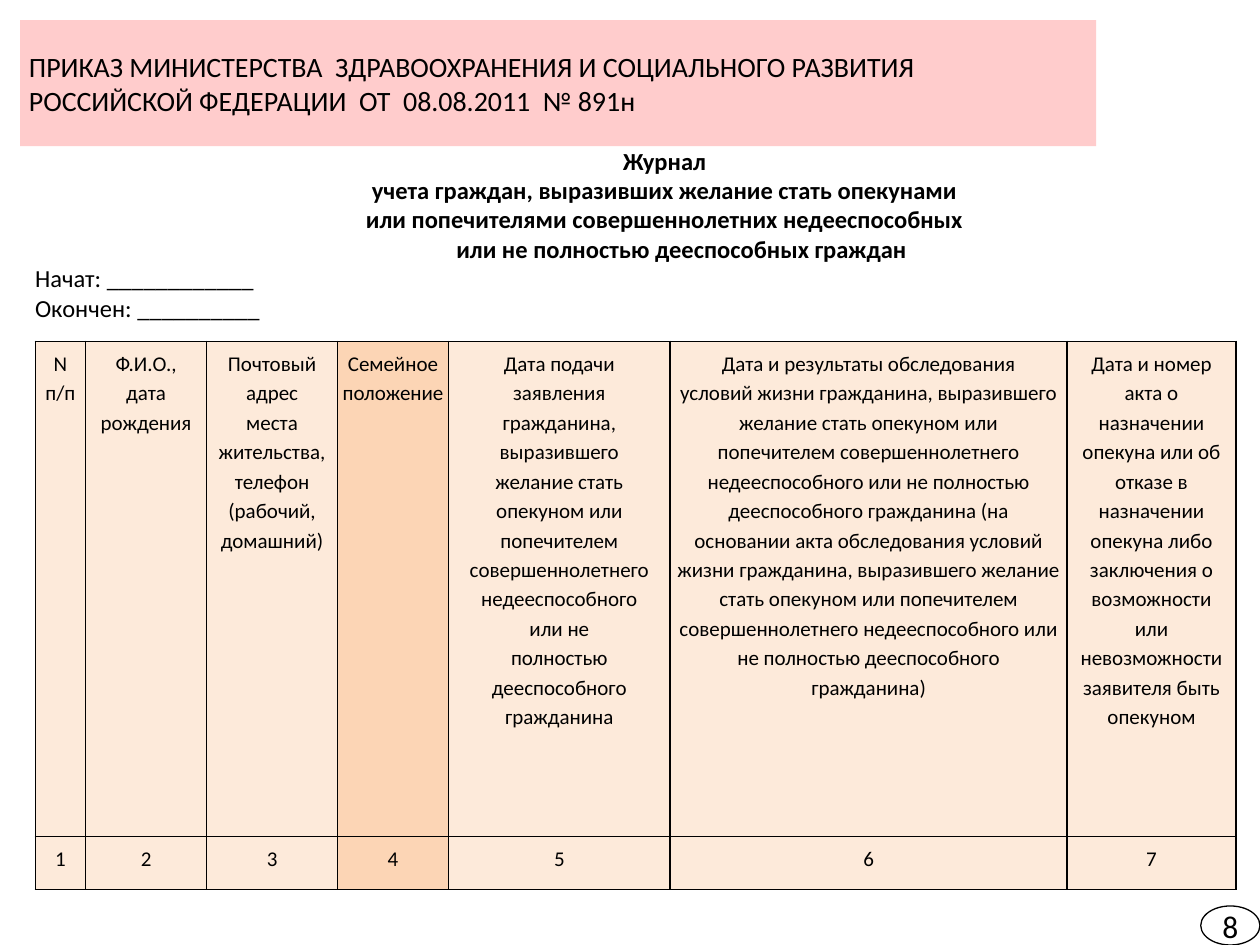
from dataclasses import dataclass

from lxml import etree
from pptx import Presentation
from pptx import util as u
from pptx.dml.color import RGBColor
from pptx.enum import shapes, text
from pptx.oxml.ns import qn

SLIDE_WIDTH, SLIDE_HEIGHT = u.Inches(10), u.Inches(7.5)
FONT, BLACK, PINK, PEACH, ORANGE = "Calibri", "000000", "FFCCCC", "FDEADA", "FCD5B5"
CENTER, LEFT = text.PP_ALIGN.CENTER, text.PP_ALIGN.LEFT


@dataclass
class Region:
    """A rectangle in percent of the slide's width and height."""
    left: float
    top: float
    width: float
    height: float

    def lengths(self) -> tuple:
        """Return left, top, width and height as slide lengths."""
        return (across(self.left), down(self.top), across(self.width), down(self.height))


@dataclass
class Line:
    """One paragraph with its look and its indent in inches."""
    words: str
    size: float
    align: text.PP_ALIGN = CENTER
    bold: bool = False
    indent: float = 0
    spacing: float = 1.0


@dataclass
class Column:
    """A journal column: width in percent of the slide, heading lines, fill."""
    width: float
    heading: str
    fill: str = PEACH


TITLE = ("ПРИКАЗ МИНИСТЕРСТВА  ЗДРАВООХРАНЕНИЯ И СОЦИАЛЬНОГО РАЗВИТИЯ",
         "РОССИЙСКОЙ ФЕДЕРАЦИИ  ОТ  08.08.2011  № 891н")
JOURNAL = [
    Line("Журнал", 14, bold=True, indent=0.55),
    Line("учета граждан, выразивших желание стать опекунами", 14, bold=True, indent=0.55),
    Line("или попечителями совершеннолетних недееспособных", 14, bold=True, indent=0.55),
    Line("или не полностью дееспособных граждан", 14, bold=True, indent=0.82),
    Line("Начат: ____________", 14, LEFT, indent=0.18),
    Line("Окончен: __________", 14, LEFT, indent=0.18),
]
COLUMNS = [
    Column(4, "N|п/п"),
    Column(9.6, "Ф.И.О.,|дата|рождения"),
    Column(10.4, "Почтовый|адрес|места|жительства,|телефон|(рабочий,|домашний)"),
    Column(8.8, "Семейное|положение", ORANGE),
    Column(17.6, "Дата подачи|заявления|гражданина,|выразившего|желание стать|опекуном или|"
                 "попечителем|совершеннолетнего|недееспособного|или не|полностью|"
                 "дееспособного|гражданина"),
    Column(31.5, "Дата и результаты обследования|условий жизни гражданина, выразившего|"
                 "желание стать опекуном или|попечителем совершеннолетнего|"
                 "недееспособного или не полностью|дееспособного гражданина (на|"
                 "основании акта обследования условий|жизни гражданина, выразившего желание|"
                 "стать опекуном или попечителем|совершеннолетнего недееспособного или|"
                 "не полностью дееспособного|гражданина)"),
    Column(13.4, "Дата и номер|акта о|назначении|опекуна или об|отказе в|назначении|"
                 "опекуна либо|заключения о|возможности|или|невозможности|"
                 "заявителя быть|опекуном"),
]
ROW_HEIGHTS = (52.4, 5.6)


def across(percent: float) -> int:
    """Turn a percentage of the slide's width into a length."""
    return int(SLIDE_WIDTH * percent / 100)


def down(percent: float) -> int:
    """Turn a percentage of the slide's height into a length."""
    return int(SLIDE_HEIGHT * percent / 100)


def color(value: str) -> RGBColor:
    """Read a colour from its hex string."""
    return RGBColor.from_string(value)


def paint(target, value: str) -> None:
    """Give a shape or cell a solid fill."""
    target.fill.solid()
    target.fill.fore_color.rgb = color(value)


def write(frame, lines: list[Line]) -> None:
    """Fill a text frame with styled paragraphs."""
    for index, line in enumerate(lines):
        para = frame.add_paragraph() if index else frame.paragraphs[0]
        para.text = line.words
        para.alignment, para.line_spacing = line.align, line.spacing
        para.space_before = para.space_after = u.Pt(0)
        font = para.font
        font.name, font.size, font.bold = FONT, u.Pt(line.size), line.bold
        font.color.rgb = color(BLACK)
        if line.indent:
            para._p.get_or_add_pPr().set("marL", str(u.Inches(line.indent)))


def draw_title(page, region: Region) -> None:
    """Place the order's name on a pink band."""
    title = page.shapes.title
    title.left, title.top, title.width, title.height = region.lengths()
    paint(title, PINK)
    frame = title.text_frame
    frame.word_wrap, frame.auto_size = True, text.MSO_AUTO_SIZE.NONE
    frame.vertical_anchor = text.MSO_ANCHOR.MIDDLE
    frame.margin_left = frame.margin_right = u.Inches(0.07)
    frame.margin_top = frame.margin_bottom = u.Inches(0.07)
    write(frame, [Line(words, 16, LEFT) for words in TITLE])


def draw_text(page, region: Region, lines: list[Line]) -> None:
    """Add a wrapped, vertically centred text box."""
    frame = page.shapes.add_textbox(*region.lengths()).text_frame
    frame.word_wrap, frame.vertical_anchor = True, text.MSO_ANCHOR.MIDDLE
    write(frame, lines)


def draw_borders(cell, value: str, points: float) -> None:
    """Rule all four sides of a cell."""
    properties = cell._tc.get_or_add_tcPr()
    for side in ("a:lnL", "a:lnR", "a:lnT", "a:lnB"):
        border = etree.SubElement(properties, qn(side), w=str(u.Pt(points)))
        fill = etree.SubElement(border, qn("a:solidFill"))
        etree.SubElement(fill, qn("a:srgbClr"), val=value)


def draw_table(page, region: Region) -> None:
    """Add the journal's headings and the row of column numbers."""
    table = page.shapes.add_table(len(ROW_HEIGHTS), len(COLUMNS), *region.lengths()).table
    for row, height in zip(table.rows, ROW_HEIGHTS):
        row.height = down(height)
    for index, column in enumerate(COLUMNS):
        table.columns[index].width = across(column.width)
        for row, words in enumerate((column.heading, str(index + 1))):
            cell = table.cell(row, index)
            cell.margin_left = cell.margin_right = u.Inches(0.03)
            cell.margin_top = cell.margin_bottom = u.Inches(0.05)
            draw_borders(cell, BLACK, 1)
            paint(cell, column.fill)
            write(cell.text_frame, [Line(part, 12, spacing=1.15) for part in words.split("|")])


def draw_page_number(page, region: Region, number: str) -> None:
    """Add the page number in an oval."""
    oval = page.shapes.add_shape(shapes.MSO_SHAPE.OVAL, *region.lengths())
    oval.shadow.inherit = False
    oval.fill.background()
    oval.line.color.rgb, oval.line.width = color(BLACK), u.Pt(0.75)
    oval.text_frame.word_wrap = False
    oval.text_frame.vertical_anchor = text.MSO_ANCHOR.MIDDLE
    write(oval.text_frame, [Line(number, 18)])


def main() -> None:
    """Build and save the slide."""
    deck = Presentation()
    deck.slide_width, deck.slide_height = SLIDE_WIDTH, SLIDE_HEIGHT
    page = deck.slides.add_slide(deck.slide_layouts.get_by_name("Title Only"))
    draw_title(page, Region(1.6, 2.13, 85.4, 13.33))
    draw_page_number(page, Region(95.3, 95.87, 4.7, 4.13), "8")
    draw_table(page, Region(2.8, 36.13, 95.3, 58))
    draw_text(page, Region(0, 14.67, 100, 20.13), JOURNAL)
    deck.save("out.pptx")


if __name__ == "__main__":
    main()
